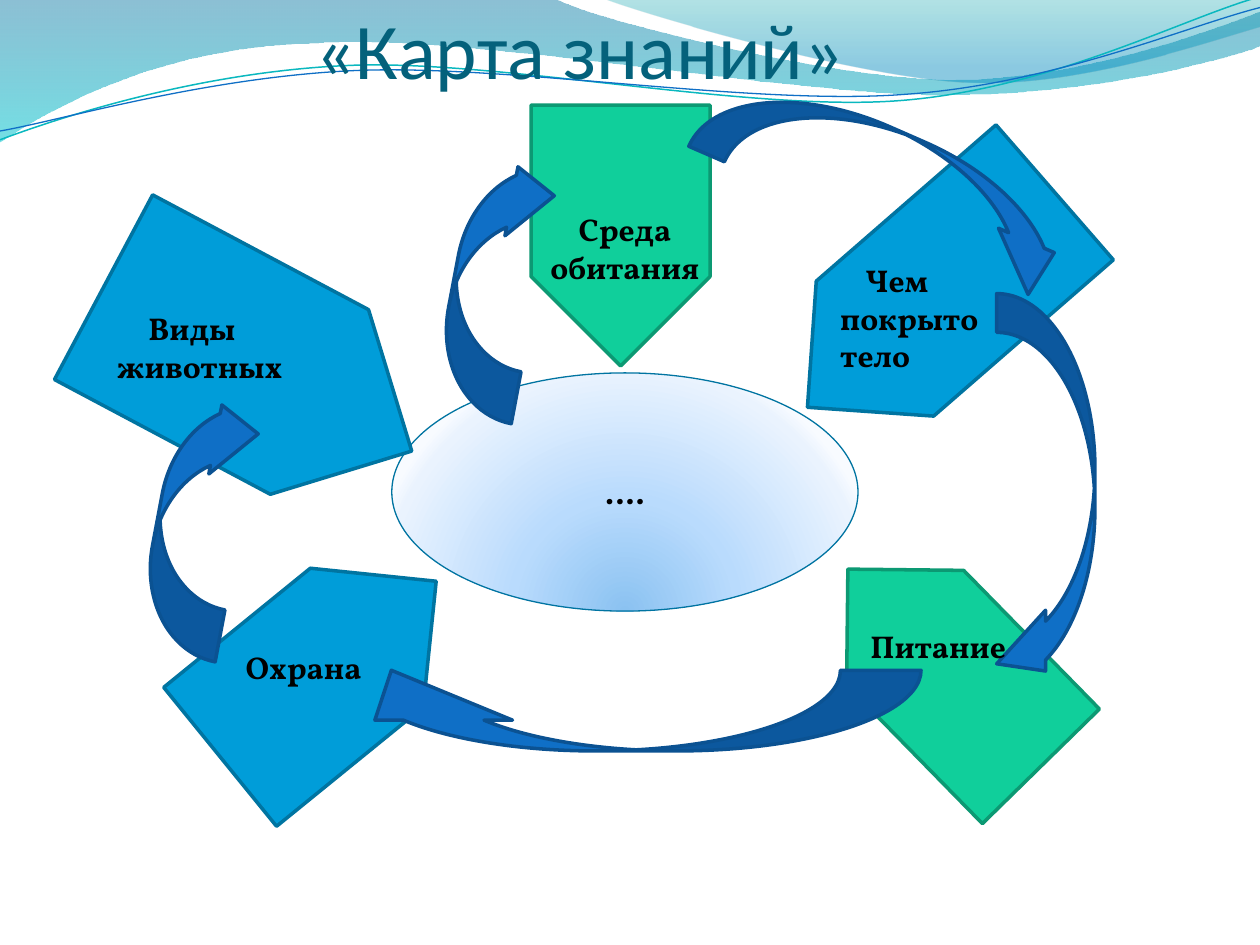
from lxml import etree
from pptx import Presentation
from pptx.dml.color import RGBColor
from pptx.enum.shapes import MSO_SHAPE
from pptx.enum.text import MSO_ANCHOR, MSO_AUTO_SIZE, PP_ALIGN
from pptx.oxml.ns import qn
from pptx.util import Inches, Pt

PLATE = MSO_SHAPE.PENTAGON
ARROW = MSO_SHAPE.CURVED_DOWN_ARROW
OVAL = MSO_SHAPE.OVAL
CENTER, LEFT = PP_ALIGN.CENTER, PP_ALIGN.LEFT
MIDDLE, BOTTOM = MSO_ANCHOR.MIDDLE, MSO_ANCHOR.BOTTOM
GROW = MSO_AUTO_SIZE.SHAPE_TO_FIT_TEXT

HEX = {
    "title": "04617B", "text": "000000",
    "blue": "009DD9", "navy": "0074A1",
    "green": "10CF9B", "pine": "0C9973",
    "arrow": "0F6FC6", "edge": "0B5292", "teal": "0AB8BF",
}

# Waves: start point, then points (lines) or three-point groups (curves)
BAND = [(0, 0), [(4.4, -0.01)],
        [(4.76, 0.17), (6.64, 0.63), (7.58, 0.63)],
        [(8.53, 0.63), (9.58, 0.26), (10, 0.09)], [(10.01, 0.36)],
        [(9.83, 0.44), (8.7, 0.76), (7.46, 0.75)],
        [(6.22, 0.75), (3.82, 0.28), (2.57, 0.34)],
        [(1.29, 0.36), (0.46, 0.83), (-0.01, 1.13)]]
CREST = [(4.79, -0.01), [(5.09, 0.11), (6.82, 0.62), (7.69, 0.65)],
         [(8.56, 0.69), (9.61, 0.32), (10, 0.21)], [(10, 0)]]
UPPER = [(0, 1.11), [(0.48, 0.93), (1.58, 0.57), (2.77, 0.52)],
         [(3.95, 0.47), (5.93, 0.89), (7.13, 0.8)],
         [(8.33, 0.71), (9.38, 0.15), (9.98, -0.02)]]
LOWER = [(0, 1.04), [(0.47, 0.96), (1.64, 0.61), (2.83, 0.56)],
         [(4.03, 0.51), (5.97, 0.84), (7.17, 0.75)],
         [(8.36, 0.67), (9.41, 0.21), (10, 0.06)]]

# Plates: box, rotation, flip, fill, line
PLATES = [
    ((0.66, 2.1, 2.77, 1.66), 28, None, "blue", "navy"),
    ((3.89, 1.16, 2.07, 1.42), 90, None, "green", "pine"),
    ((1.5, 4.6, 2.21, 1.42), 320.9, None, "blue", "navy"),
    ((6.09, 1.67, 2.6, 1.42), 319, "flipH", "blue", "navy"),
    ((6.4, 4.65, 2.19, 1.3), 225.6, "flipV", "green", "pine"),
]

# Arrows: box, rotation, adjustments
SMALL, LARGE = (0.635, 0.845, 0.494), (0.395, 0.619, 0.497)
ARROWS = [
    ((2.87, 1.93, 2.12, 0.66), 280.7, SMALL),
    ((5.49, 1.05, 3.18, 0.78), 23.6, LARGE),
    ((6.71, 3.53, 3.18, 0.78), 90, LARGE),
    ((2.56, 5.32, 4.75, 0.64), 180, (1.501, 1.706, 0.618)),
    ((0.52, 3.82, 2.12, 0.66), 280.7, SMALL),
]

# Labels: text, box, alignment, first-line indent, top inset
LABELS = [
    ("Среда обитания", (4.21, 1.62, 1.5, 0.71), CENTER, 0, 0.05),
    ("Виды животных", (0.83, 2.1, 2.13, 1.31), LEFT, 0.25, 0.35),
    ("Чем покрыто тело", (6.57, 2.02, 1.73, 1.01), LEFT, 0.2, 0.05),
    ("Питание", (6.81, 4.93, 1.73, 0.4), LEFT, 0, 0.05),
    ("Охрана", (1.85, 5.09, 1.65, 0.4), LEFT, 0, 0.05),
]


def color(name):
    return RGBColor.from_string(HEX[name])


def write(frame, text, align, size=18, font="Vollkorn", tone="text", bold=True):
    frame.word_wrap = True
    frame.text = text
    para = frame.paragraphs[0]
    para.alignment = align
    face = para.runs[0].font
    face.size, face.name, face.bold = Pt(size), font, bold
    face.color.rgb = color(tone)
    return para


def stroke(shape, tone, width):
    shape.line.color.rgb = color(tone)
    shape.line.width = Pt(width)


def blend(shape, stops, round_fill=False):
    """Gradient fill from (position, hex, alpha) stops."""
    shape.fill.background()
    grad = etree.Element(qn("a:gradFill"), rotWithShape="1")
    items = etree.SubElement(grad, qn("a:gsLst"))
    for pos, tone, alpha in stops:
        stop = etree.SubElement(items, qn("a:gs"), pos=str(pos * 1000))
        clr = etree.SubElement(stop, qn("a:srgbClr"), val=tone)
        if alpha < 100:
            etree.SubElement(clr, qn("a:alpha"), val=str(alpha * 1000))
    if round_fill:
        way = etree.SubElement(grad, qn("a:path"), path="circle")
        etree.SubElement(way, qn("a:fillToRect"), l="50000", t="130000",
                         r="50000", b="-30000")
    else:
        etree.SubElement(grad, qn("a:lin"), ang="5400000", scaled="0")
    props = shape.element.spPr
    props.replace(props.find(qn("a:noFill")), grad)


def bend(wave, parts):
    """Turn the straight segments of three-point parts into curves."""
    lines = list(wave.element.iter(qn("a:lnTo")))
    for line, part in zip(lines, parts[1:]):
        if len(part) < 3:
            continue
        curve = etree.Element(qn("a:cubicBezTo"))
        for x, y in part:
            etree.SubElement(curve, qn("a:pt"), x=str(Inches(x) - wave.left),
                             y=str(Inches(y) - wave.top))
        line.getparent().replace(line, curve)


def add_wave(slide, parts, close):
    """Draw a wave and place it on the master, behind the slide."""
    ends = [parts[0]] + [part[-1] for part in parts[1:]]
    points = [(Inches(x), Inches(y)) for x, y in ends]
    pen = slide.shapes.build_freeform(*points[0])
    pen.add_line_segments(points[1:], close=close)
    wave = pen.convert_to_shape()
    bend(wave, parts)
    wave.shadow.inherit = False
    wave.fill.background()
    wave.line.fill.background()
    master = slide.slide_layout.slide_master
    master.placeholders[0].element.addprevious(wave.element)
    return wave


def add_form(slide, kind, box, fill, line, width=2, turn=0):
    form = slide.shapes.add_shape(kind, *map(Inches, box))
    form.shadow.inherit = False
    form.rotation = turn
    form.fill.solid()
    form.fill.fore_color.rgb = color(fill)
    stroke(form, line, width)
    return form


def add_arrow(slide, box, turn, bends):
    arrow = add_form(slide, ARROW, box, "arrow", "edge", turn=turn)
    for i, value in enumerate(bends):
        arrow.adjustments[i] = value


def add_label(slide, text, box, align, indent, top):
    frame = slide.shapes.add_textbox(*map(Inches, box)).text_frame
    frame.margin_top = Inches(top)
    para = write(frame, text, align)
    frame.auto_size = GROW
    if indent:
        para._p.get_or_add_pPr().set("indent", str(Inches(indent)))


def add_title(slide, text):
    title = slide.shapes.title
    title.left, title.top, title.width, title.height = map(
        Inches, (0.5, 0, 9, 0.76))
    frame = title.text_frame
    write(frame, text, CENTER, 45, "Calibri", "title", False)
    frame.vertical_anchor = BOTTOM
    frame.margin_left = frame.margin_bottom = 0
    frame.margin_right = Inches(0.8)


def main():
    deck = Presentation()
    deck.slide_width, deck.slide_height = Inches(10), Inches(7.5)
    slide = deck.slides.add_slide(deck.slide_layouts[5])

    # Header waves and title
    blend(add_wave(slide, BAND, True), [(0, "0074A1", 45), (100, "00C6CF", 55)])
    blend(add_wave(slide, CREST, True), [(0, "00A1A9", 30), (80, "008BBF", 45)])
    stroke(add_wave(slide, UPPER, False), "teal", 0.85)
    stroke(add_wave(slide, LOWER, False), "arrow", 0.75)
    add_title(slide, "«Карта знаний»")

    # Centre
    hub = add_form(slide, OVAL, (3.11, 2.96, 3.7, 1.89), "blue", "navy", 0.75)
    blend(hub, [(0, "8BC2F1", 100), (43, "B9DBFD", 100),
                (93, "EAF3FE", 100), (100, "F8FBFF", 100)], True)
    write(hub.text_frame, "….", CENTER)
    hub.text_frame.vertical_anchor = MIDDLE

    # Topic plates, arrows and labels
    for box, turn, flip, fill, line in PLATES:
        plate = add_form(slide, PLATE, box, fill, line, turn=turn)
        if flip:
            plate.element.spPr.xfrm.set(flip, "1")
    for arrow in ARROWS[:-1]:
        add_arrow(slide, *arrow)
    for label in LABELS:
        add_label(slide, *label)
    add_arrow(slide, *ARROWS[-1])

    deck.save("out.pptx")


if __name__ == "__main__":
    main()
